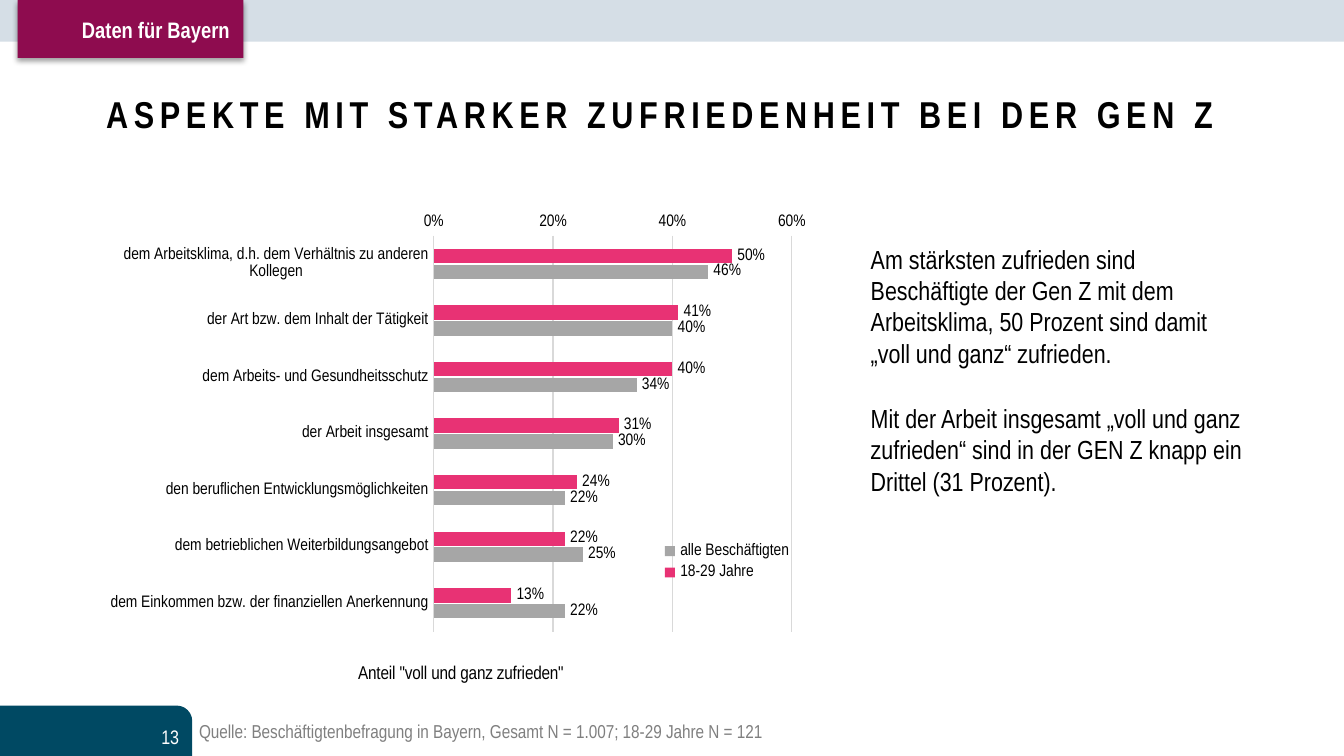
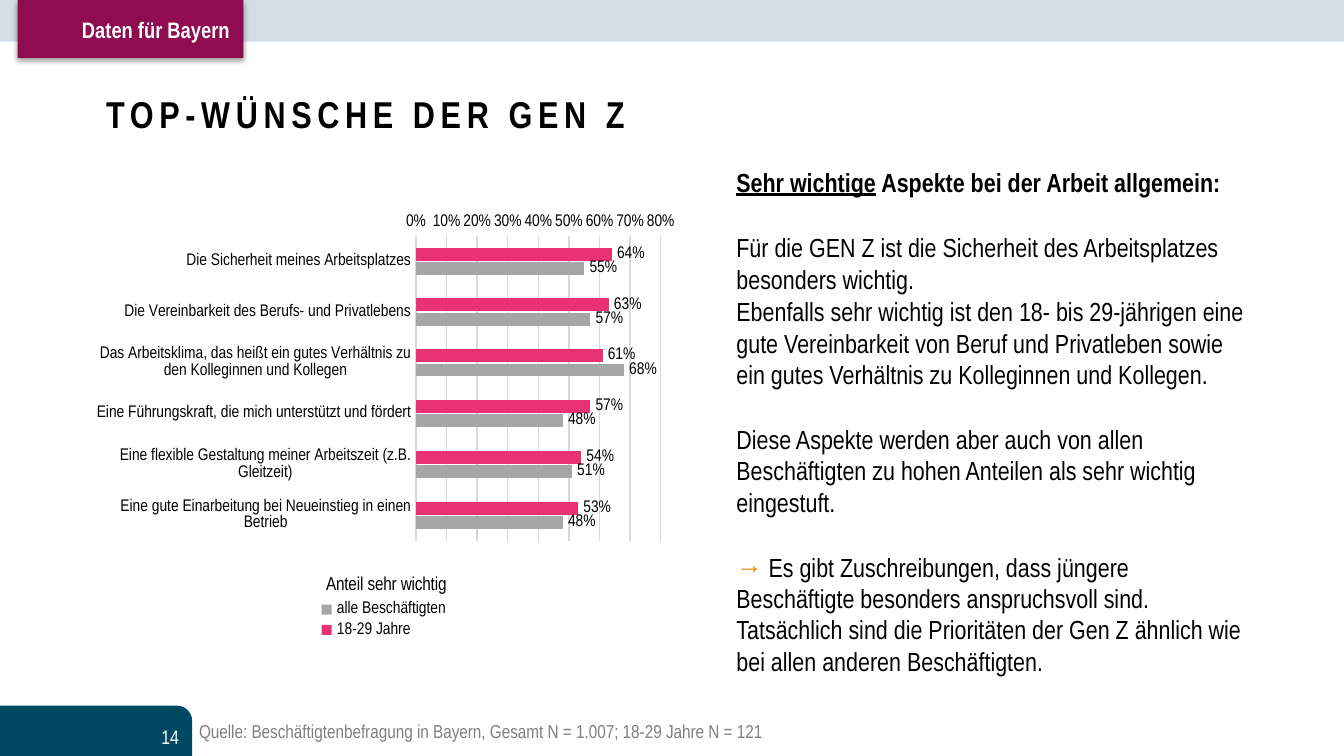
from dataclasses import dataclass
from typing import NamedTuple, Optional

from lxml.etree import SubElement
from pptx import Presentation
from pptx.chart.data import CategoryChartData
from pptx.dml.color import RGBColor
from pptx.enum.chart import XL_AXIS_CROSSES as Crosses
from pptx.enum.chart import XL_CHART_TYPE as ChartType
from pptx.enum.chart import XL_LABEL_POSITION as LabelPosition
from pptx.enum.chart import XL_LEGEND_POSITION as LegendPosition
from pptx.enum.chart import XL_TICK_MARK as TickMark
from pptx.enum.shapes import MSO_SHAPE as Shape
from pptx.enum.text import MSO_ANCHOR as Anchor
from pptx.enum.text import MSO_AUTO_SIZE as AutoSize
from pptx.enum.text import PP_ALIGN as Align
from pptx.oxml.ns import qn
from pptx.util import Pt

FONT = "Arial Narrow"
BLACK = RGBColor(0x00, 0x00, 0x00)
WHITE = RGBColor(0xFF, 0xFF, 0xFF)
TEAL = RGBColor(0x00, 0x49, 0x63)
PALE_BLUE = RGBColor(0xD5, 0xDE, 0xE6)
BERRY = RGBColor(0x8E, 0x0C, 0x4F)
PINK = RGBColor(0xE8, 0x32, 0x74)
GRAY = RGBColor(0xA6, 0xA6, 0xA6)
SOURCE_GRAY = RGBColor(0x7F, 0x7F, 0x7F)
GRID_GRAY = RGBColor(0xD9, 0xD9, 0xD9)
ORANGE = RGBColor(0xEF, 0x7D, 0x00)

SERIES = (("18-29 Jahre", PINK), ("alle Beschäftigten", GRAY))
SOURCE = ("Quelle: Beschäftigtenbefragung in Bayern, "
          "Gesamt N = 1.007; 18-29 Jahre N = 121")
NEXT_LINE, NEXT_BLOCK = 0.7, 18


class Box(NamedTuple):
    """Left, top, width and height in points."""
    left: float
    top: float
    width: float
    height: float

    def lengths(self) -> list:
        return [Pt(value) for value in self]


class Phrase(NamedTuple):
    text: str
    bold: bool = False
    underline: bool = False
    color: RGBColor = BLACK


class Statement(NamedTuple):
    phrases: tuple
    space_before: float = NEXT_BLOCK


class Row(NamedTuple):
    category: str
    young: float
    everyone: float


@dataclass
class Survey:
    """A bar chart; plot, legend and axis title spots are chart fractions."""
    box: Box
    rows: tuple
    axis_title: str
    axis_max: float
    axis_step: float
    plot: tuple
    title_spot: tuple
    legend: tuple
    legend_position: LegendPosition


@dataclass
class Page:
    number: int
    title: str
    title_width: float
    body: Box
    statements: tuple
    survey: Survey


PAGES = (
    Page(
        13, "ASPEKTE MIT STARKER ZUFRIEDENHEIT BEI DER GEN Z", 687,
        Box(459.4, 126.7, 218.2, 204.5),
        (
            Statement((Phrase(
                "Am stärksten zufrieden sind Beschäftigte der Gen Z mit dem "
                "Arbeitsklima, 50 Prozent sind damit „voll und ganz“ "
                "zufrieden."),), 0),
            Statement((Phrase(
                "Mit der Arbeit insgesamt „voll und ganz zufrieden“ sind in "
                "der GEN Z knapp ein Drittel (31 Prozent)."),)),
        ),
        Survey(
            Box(42.5, 114.5, 398.9, 257.8),
            (
                Row("dem Arbeitsklima, d.h. dem Verhältnis zu anderen "
                    "Kollegen", 0.50, 0.46),
                Row("der Art bzw. dem Inhalt der Tätigkeit", 0.41, 0.40),
                Row("dem Arbeits- und Gesundheitsschutz", 0.40, 0.34),
                Row("der Arbeit insgesamt", 0.31, 0.30),
                Row("den beruflichen Entwicklungsmöglichkeiten", 0.24, 0.22),
                Row("dem betrieblichen Weiterbildungsangebot", 0.22, 0.25),
                Row("dem Einkommen bzw. der finanziellen Anerkennung",
                    0.13, 0.22),
            ),
            'Anteil "voll und ganz zufrieden"', 0.6, 0.2,
            (0.476, 0.033, 0.481, 0.834), (0.37, 0.93),
            (0.78, 0.67, 0.18, 0.1), LegendPosition.RIGHT,
        ),
    ),
    Page(
        14, "TOP-WÜNSCHE DER GEN Z", 620.6,
        Box(387.4, 85.7, 287.3, 288),
        (
            Statement((Phrase("Sehr wichtige", True, True),
                       Phrase(" Aspekte bei der Arbeit allgemein:", True)), 0),
            Statement((Phrase(
                "Für die GEN Z ist die Sicherheit des Arbeitsplatzes "
                "besonders wichtig."),)),
            Statement((Phrase(
                "Ebenfalls sehr wichtig ist den 18- bis 29-jährigen eine gute "
                "Vereinbarkeit von Beruf und Privatleben sowie ein gutes "
                "Verhältnis zu Kolleginnen und Kollegen."),), NEXT_LINE),
            Statement((Phrase(
                "Diese Aspekte werden aber auch von allen Beschäftigten zu "
                "hohen Anteilen als sehr wichtig eingestuft."),)),
            Statement((Phrase("→ ", color=ORANGE), Phrase(
                "Es gibt Zuschreibungen, dass jüngere Beschäftigte besonders "
                "anspruchsvoll sind. Tatsächlich sind die Prioritäten der Gen "
                "Z ähnlich wie bei allen anderen Beschäftigten."))),
        ),
        Survey(
            Box(45.4, 114.5, 326.9, 239.8),
            (
                Row("Die Sicherheit meines Arbeitsplatzes", 0.64, 0.55),
                Row("Die Vereinbarkeit des Berufs- und Privatlebens",
                    0.63, 0.57),
                Row("Das Arbeitsklima, das heißt ein gutes Verhältnis zu den "
                    "Kolleginnen und Kollegen", 0.61, 0.68),
                Row("Eine Führungskraft, die mich unterstützt und fördert",
                    0.57, 0.48),
                Row("Eine flexible Gestaltung meiner Arbeitszeit (z.B. "
                    "Gleitzeit)", 0.54, 0.51),
                Row("Eine gute Einarbeitung bei Neueinstieg in einen Betrieb",
                    0.53, 0.48),
            ),
            "Anteil sehr wichtig", 0.8, 0.1,
            (0.543, 0.046, 0.401, 0.684), (0.39, 0.8),
            (0.365, 0.857, 0.25, 0.1), LegendPosition.BOTTOM,
        ),
    ),
)


def style_font(font, size: float, color: RGBColor = BLACK,
               bold: bool = False) -> None:
    font.name, font.size, font.bold = FONT, Pt(size), bold
    font.color.rgb = color


def add_panel(slide, kind: Shape, box: Box, color: RGBColor):
    panel = slide.shapes.add_shape(kind, *box.lengths())
    panel.shadow.inherit = False
    panel.fill.solid()
    panel.fill.fore_color.rgb = color
    panel.line.fill.background()
    return panel


def add_label(slide, box: Box, text: str, size: float, color: RGBColor,
              bold: bool = False, align: Align = Align.RIGHT):
    frame = slide.shapes.add_textbox(*box.lengths()).text_frame
    frame.word_wrap = True
    frame.text = text
    paragraph = frame.paragraphs[0]
    paragraph.alignment = align
    style_font(paragraph.runs[0].font, size, color, bold)
    return frame


def add_soft_shadow(panel) -> None:
    effects = panel.element.spPr.find(qn("a:effectLst"))
    shadow = SubElement(effects, qn("a:outerShdw"), blurRad=str(Pt(3.1)),
                        dist=str(Pt(1.6)), dir="5400000", rotWithShape="0")
    color = SubElement(shadow, qn("a:srgbClr"), val=str(BLACK))
    SubElement(color, qn("a:alpha"), val="38000")


def add_frame_parts(slide, number: int) -> None:
    """Draw the band, ribbon, page number and source of every slide."""
    corner = add_panel(slide, Shape.ROUND_1_RECTANGLE,
                       Box(0, 378, 103, 27), TEAL)
    corner.adjustments[0] = 0.307
    add_panel(slide, Shape.RECTANGLE, Box(0, 0, 720, 22.3), PALE_BLUE)
    page_number = add_label(slide, Box(24.5, 383.8, 78.5, 21.6),
                            str(number), 10.5, WHITE)
    page_number.vertical_anchor = Anchor.MIDDLE
    ribbon = add_panel(slide, Shape.RECTANGLE, Box(9.4, 0, 121, 31), BERRY)
    add_soft_shadow(ribbon)
    add_label(slide, Box(24.5, 5, 105.8, 21.6), "Daten für Bayern",
              12, WHITE, bold=True)
    source = add_label(slide, Box(103, 382.3, 529.2, 18.7), SOURCE,
                       10, SOURCE_GRAY, align=Align.LEFT)
    source.margin_left = source.margin_right = Pt(3.6)


def set_title(slide, text: str, width: float) -> None:
    title = slide.shapes.title
    title.left, title.top, title.width, title.height = Box(
        49.7, 21.6, width, 78.5).lengths()
    frame = title.text_frame
    frame.text = text
    frame.auto_size = AutoSize.NONE
    frame.vertical_anchor = Anchor.MIDDLE
    paragraph = frame.paragraphs[0]
    paragraph.alignment = Align.LEFT
    font = paragraph.runs[0].font
    style_font(font, 20, bold=True)
    paragraph.runs[0]._r.get_or_add_rPr().set("spc", "300")


def add_statements(slide, box: Box, statements: tuple) -> None:
    frame = slide.shapes.add_textbox(*box.lengths()).text_frame
    frame.word_wrap = True
    for index, statement in enumerate(statements):
        paragraph = frame.add_paragraph() if index else frame.paragraphs[0]
        if index:
            paragraph.space_before = Pt(statement.space_before)
        for phrase in statement.phrases:
            run = paragraph.add_run()
            run.text = phrase.text
            style_font(run.font, 14, phrase.color, phrase.bold)
            if phrase.underline:
                run.font.underline = True


def place_part(part, spot: tuple, after: Optional[str] = None,
               inner: bool = False) -> None:
    """Give a chart part a manual layout, put behind its child `after`."""
    for old in part.findall(qn("c:layout")):
        part.remove(old)
    layout = SubElement(part, qn("c:layout"))
    part.insert(part.index(part.find(qn(after))) + 1 if after else 0, layout)
    manual = SubElement(layout, qn("c:manualLayout"))
    if inner:
        SubElement(manual, qn("c:layoutTarget"), val="inner")
    for mode in ("xMode", "yMode"):
        SubElement(manual, qn(f"c:{mode}"), val="edge")
    for side, value in zip("xywh", spot):
        SubElement(manual, qn(f"c:{side}"), val=str(value))


def style_axes(chart, survey: Survey) -> None:
    categories, shares = chart.category_axis, chart.value_axis
    for axis in (categories, shares):
        axis.major_tick_mark = axis.minor_tick_mark = TickMark.NONE
        style_font(axis.tick_labels.font, 9)
    categories.reverse_order = True
    categories.crosses = Crosses.MAXIMUM
    shares.minimum_scale, shares.maximum_scale = 0, survey.axis_max
    shares.major_unit = survey.axis_step
    shares.tick_labels.number_format = "0%"
    shares.tick_labels.number_format_is_linked = False
    shares.format.line.fill.background()
    shares.has_major_gridlines = True
    for line in (categories.format.line, shares.major_gridlines.format.line):
        line.color.rgb = GRID_GRAY
        line.width = Pt(0.75)
    heading = shares.axis_title
    heading.text_frame.text = survey.axis_title
    style_font(heading.text_frame.paragraphs[0].runs[0].font, 10)
    place_part(heading.element, survey.title_spot, "c:tx")


def add_survey(slide, survey: Survey) -> None:
    data = CategoryChartData(number_format="0%")
    data.categories = [row.category for row in survey.rows]
    columns = zip(*(row[1:] for row in survey.rows))
    for (name, _), values in zip(SERIES, columns):
        data.add_series(name, values)
    chart = slide.shapes.add_chart(
        ChartType.BAR_CLUSTERED, *survey.box.lengths(), data).chart
    chart.has_title = False
    style_font(chart.font, 10)
    style_axes(chart, survey)

    bars = chart.plots[0]
    bars.gap_width, bars.overlap = 182, -10
    bars.vary_by_categories = False
    for series, (_, color) in zip(bars.series, SERIES):
        series.format.fill.solid()
        series.format.fill.fore_color.rgb = color
        labels = series.data_labels
        labels.show_value = True
        labels.position = LabelPosition.OUTSIDE_END
        labels.number_format = "0%"
        labels.number_format_is_linked = False
        style_font(labels.font, 9)

    chart.has_legend = True
    chart.legend.position = survey.legend_position
    chart.legend.include_in_layout = False
    style_font(chart.legend.font, 9)
    place_part(chart.element.find(f".//{qn('c:legend')}"), survey.legend,
               "c:legendPos")
    place_part(chart.element.find(f".//{qn('c:plotArea')}"), survey.plot,
               inner=True)


def main() -> None:
    deck = Presentation()
    deck.slide_width, deck.slide_height = Pt(720), Pt(405)
    title_only = deck.slide_layouts[5]
    for page in PAGES:
        slide = deck.slides.add_slide(title_only)
        add_frame_parts(slide, page.number)
        set_title(slide, page.title, page.title_width)
        add_statements(slide, page.body, page.statements)
        add_survey(slide, page.survey)
    deck.save("out.pptx")


if __name__ == "__main__":
    main()
